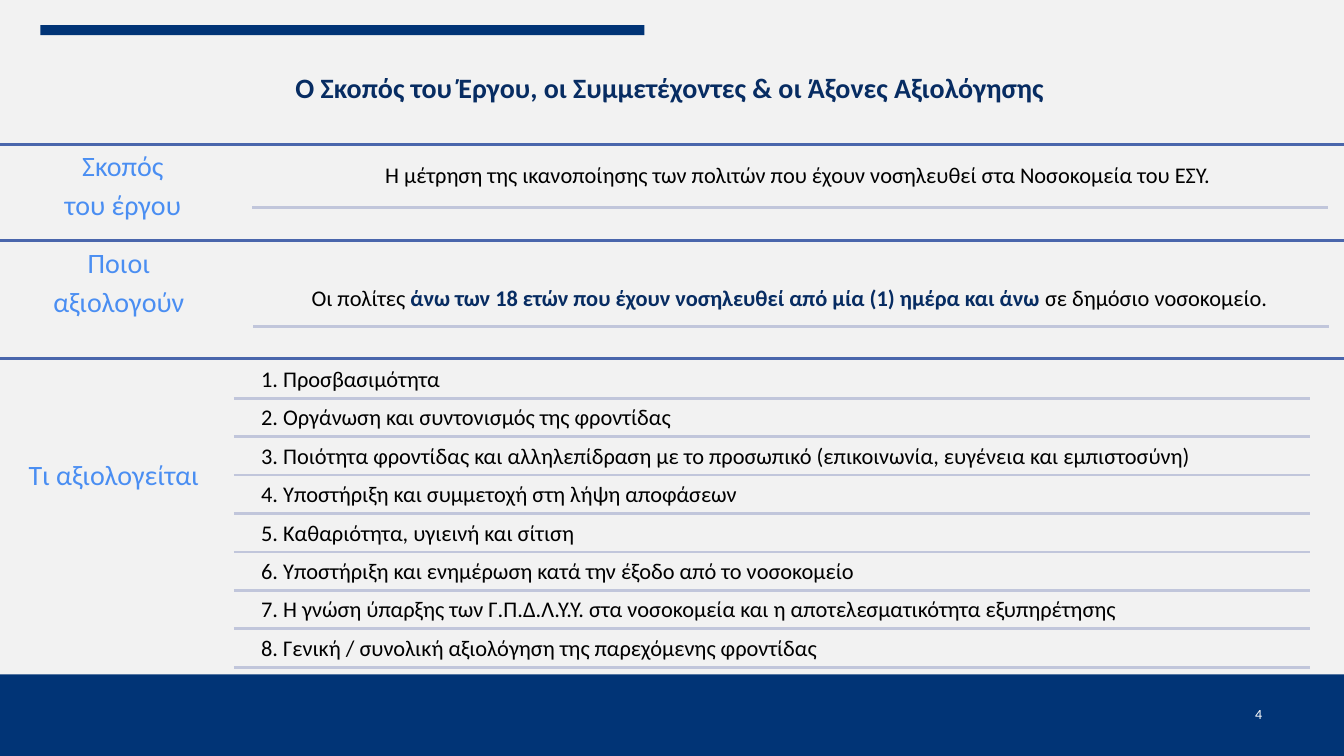
from dataclasses import dataclass

from lxml import etree
from pptx import Presentation
from pptx import util as u
from pptx.dml.color import RGBColor
from pptx.enum import shapes, text
from pptx.oxml import ns
from pptx.slide import Slide
from pptx.text.text import TextFrame, _Run

PAPER = RGBColor(0xF2, 0xF2, 0xF2)
BAND = RGBColor(0x01, 0x34, 0x76)
NAVY = RGBColor(0x07, 0x2C, 0x62)
SKY = RGBColor(0x4A, 0x8E, 0xF2)
RULE = RGBColor(0x4A, 0x66, 0xAC)
PALE_RULE = RGBColor(0xC1, 0xC6, 0xDB)
BLACK = RGBColor(0, 0, 0)
WHITE = RGBColor(0xFF, 0xFF, 0xFF)

FONT = "Calibri"
SLIDE_WIDTH = 13.33
ENTRY_WIDTH = 10.47
RULE_LENGTH = 10.67


@dataclass(frozen=True)
class Section:
    rule_y: float
    label: str
    label_top: float
    label_width: float


@dataclass(frozen=True)
class Entry:
    phrases: tuple[str, ...]
    left: float
    top: float
    rule_left: float
    rule_y: float
    align: text.PP_ALIGN = text.PP_ALIGN.CENTER


SECTIONS = (
    Section(1.43, "Σκοπός \nτου έργου ", 1.43, 2.5),
    Section(2.39, "Ποιοι \nαξιολογούν ", 2.39, 2.42),
    Section(3.56, "Τι αξιολογείται ", 4.5, 2.32),
)

CRITERIA = (
    "Προσβασιμότητα",
    "Οργάνωση και συντονισμός της φροντίδας",
    "Ποιότητα φροντίδας και αλληλεπίδραση με το προσωπικό (επικοινωνία, ευγένεια και εμπιστοσύνη)",
    "Υποστήριξη και συμμετοχή στη λήψη αποφάσεων",
    "Καθαριότητα, υγιεινή και σίτιση",
    "Υποστήριξη και ενημέρωση κατά την έξοδο από το νοσοκομείο",
    "Η γνώση ύπαρξης των Γ.Π.Δ.Λ.Υ.Υ. στα νοσοκομεία και η αποτελεσματικότητα εξυπηρέτησης",
    "Γενική / συνολική αξιολόγηση της παρεχόμενης φροντίδας",
)
CRITERIA_TOP = 3.58
CRITERIA_RULE = 3.95
CRITERIA_PITCH = (6.62 - CRITERIA_RULE) / (len(CRITERIA) - 1)

ENTRIES = (
    Entry(
        ("Η μέτρηση της ικανοποίησης των πολιτών που έχουν νοσηλευθεί στα Νοσοκομεία του ΕΣΥ.",),
        2.68, 1.56, 2.5, 2.06,
    ),
    Entry(
        (
            "Οι πολίτες ",
            "άνω των 18 ετών που έχουν νοσηλευθεί από μία (1) ημέρα και άνω ",
            "σε δημόσιο νοσοκομείο. ",
        ),
        2.62, 2.78, 2.51, 3.24,
    ),
    *(
        Entry(
            (f"{index + 1}. {criterion}",),
            2.52, CRITERIA_TOP + index * CRITERIA_PITCH,
            2.32, CRITERIA_RULE + index * CRITERIA_PITCH,
            text.PP_ALIGN.LEFT,
        )
        for index, criterion in enumerate(CRITERIA)
    ),
)


def style_run(run: _Run, size: float, color: RGBColor, bold: bool = False) -> None:
    run.font.name = FONT
    run.font.size = u.Pt(size)
    run.font.color.rgb = color
    run.font.bold = bold


def set_insets(frame: TextFrame, inset: float) -> None:
    frame.margin_left = frame.margin_right = u.Inches(inset)
    frame.margin_top = frame.margin_bottom = u.Inches(inset)


def add_text(
    slide: Slide, left: float, top: float, width: float, height: float, inset: float
) -> TextFrame:
    box = slide.shapes.add_textbox(
        u.Inches(left), u.Inches(top), u.Inches(width), u.Inches(height)
    )
    frame = box.text_frame
    frame.word_wrap = True
    set_insets(frame, inset)
    return frame


def add_band(slide: Slide, left: float, top: float, width: float, height: float) -> None:
    band = slide.shapes.add_shape(
        shapes.MSO_SHAPE.RECTANGLE,
        u.Inches(left), u.Inches(top), u.Inches(width), u.Inches(height),
    )
    band.shadow.inherit = False
    band.fill.solid()
    band.fill.fore_color.rgb = BAND
    band.line.fill.background()


def add_rule(slide: Slide, left: float, y: float, length: float, color: RGBColor) -> None:
    rule = slide.shapes.add_connector(
        shapes.MSO_CONNECTOR.STRAIGHT,
        u.Inches(left), u.Inches(y), u.Inches(left + length), u.Inches(y),
    )
    rule.line.color.rgb = color
    rule.line.width = u.Pt(2)
    etree.SubElement(rule._element.spPr, ns.qn("a:effectLst"))


def add_title(slide: Slide) -> None:
    title = slide.shapes.title
    title.left, title.top = u.Inches(0), u.Inches(0.36)
    title.width, title.height = u.Inches(SLIDE_WIDTH), u.Inches(0.73)
    title.fill.solid()
    title.fill.fore_color.rgb = PAPER
    frame = title.text_frame
    frame.text = "Ο Σκοπός του Έργου, οι Συμμετέχοντες & οι Άξονες Αξιολόγησης "
    frame.auto_size = text.MSO_AUTO_SIZE.NONE
    frame.vertical_anchor = text.MSO_ANCHOR.BOTTOM
    set_insets(frame, 0.05)
    frame.margin_left, frame.margin_right = u.Inches(0.12), u.Inches(0.1)
    heading = frame.paragraphs[0]
    heading.alignment = text.PP_ALIGN.CENTER
    heading.line_spacing = 0.9
    style_run(heading.runs[0], 20, NAVY, True)


def add_section(slide: Slide, section: Section) -> None:
    add_rule(slide, 0, section.rule_y, SLIDE_WIDTH, RULE)
    frame = add_text(slide, 0, section.label_top, section.label_width, 0.89, 0.08)
    frame.text = section.label
    for line in frame.paragraphs:
        line.alignment = text.PP_ALIGN.CENTER
        line.line_spacing = 0.9
        line.space_after = u.Pt(6.6)
        style_run(line.runs[0], 20, SKY)


def add_entry(slide: Slide, entry: Entry) -> None:
    frame = add_text(slide, entry.left, entry.top, ENTRY_WIDTH, 0.36, 0.07)
    sentence = frame.paragraphs[0]
    sentence.alignment = entry.align
    sentence.line_spacing = 0.9
    for position, phrase in enumerate(entry.phrases):
        run = sentence.add_run()
        run.text = phrase
        emphasised = position == 1
        style_run(run, 16, NAVY if emphasised else BLACK, emphasised)
    add_rule(slide, entry.rule_left, entry.rule_y, RULE_LENGTH, PALE_RULE)


def add_page_number(slide: Slide) -> None:
    frame = add_text(slide, 12.35, 6.8, 0.57, 0.57, 0.1)
    frame.vertical_anchor = text.MSO_ANCHOR.MIDDLE
    frame.text = "4"
    style_run(frame.paragraphs[0].runs[0], 10, WHITE)


def main() -> None:
    deck = Presentation()
    deck.slide_width, deck.slide_height = u.Inches(SLIDE_WIDTH), u.Inches(7.5)
    slide = deck.slides.add_slide(deck.slide_layouts[5])
    slide.background.fill.solid()
    slide.background.fill.fore_color.rgb = PAPER
    add_title(slide)
    add_band(slide, 0, 6.69, SLIDE_WIDTH, 0.81)
    add_band(slide, 0.4, 0.25, 5.99, 0.1)
    for section in SECTIONS:
        add_section(slide, section)
    for entry in ENTRIES:
        add_entry(slide, entry)
    add_page_number(slide)
    deck.save("out.pptx")


if __name__ == "__main__":
    main()
